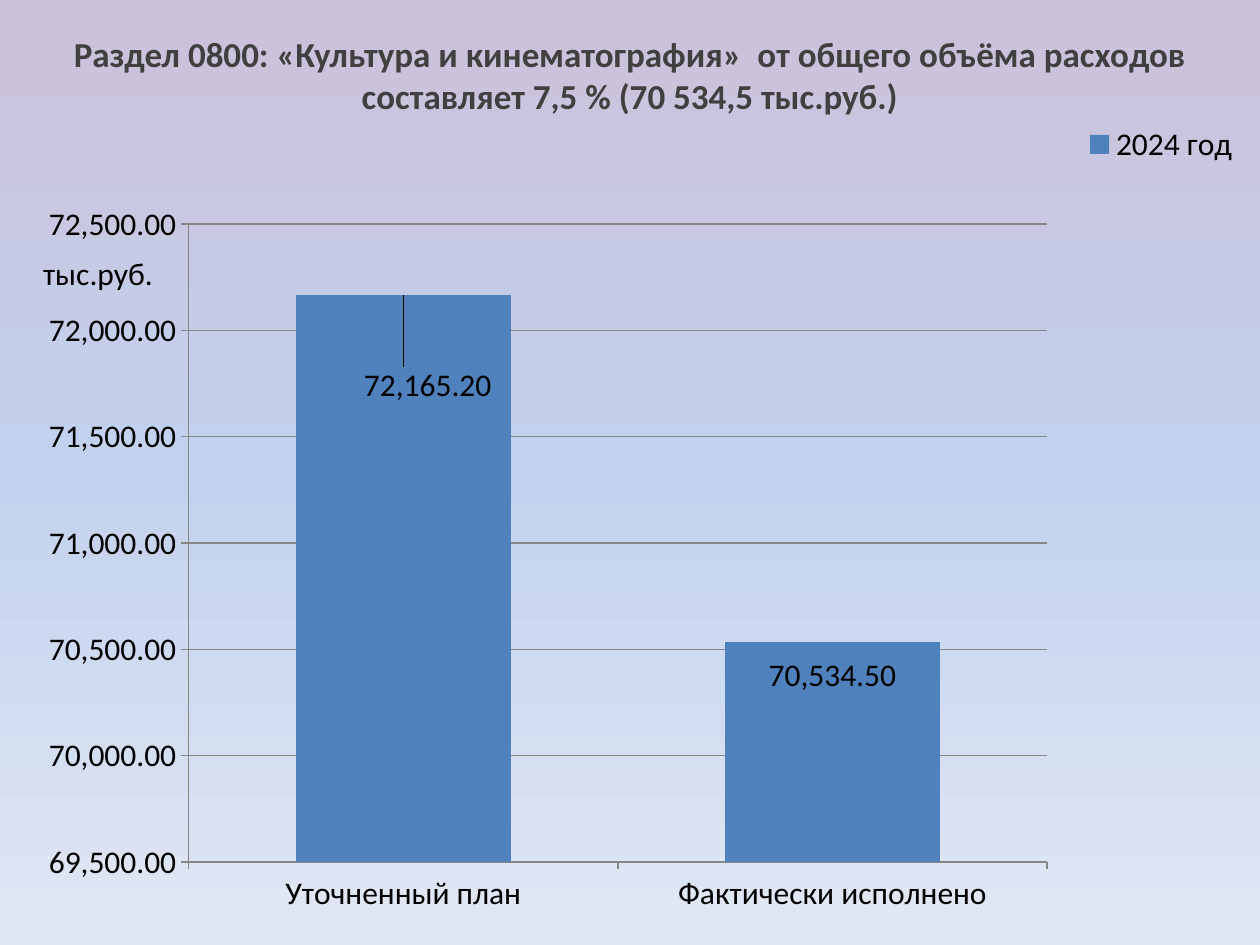
from copy import deepcopy

from pptx import Presentation
from pptx.chart.data import CategoryChartData
from pptx.dml.color import RGBColor
from pptx.enum.chart import (XL_CHART_TYPE, XL_LABEL_POSITION,
                             XL_LEGEND_POSITION, XL_TICK_MARK)
from pptx.enum.text import MSO_ANCHOR, MSO_AUTO_SIZE, PP_ALIGN
from pptx.oxml import parse_xml
from pptx.oxml.ns import nsdecls, qn
from pptx.util import Pt

COLORS = {"heading": "404040", "text": "000000", "bar": "4F81BD", "axis": "868686"}
BACKGROUND = [(0, "CCC1DA"), (0.5, "C2D1ED"), (1, "E1E8F5")]
FONT = "Calibri"
NUMBER_FORMAT = "#,##0.00"
# Shift of each value label from the bar end, as a share of the chart
LABEL_SHIFTS = [(0.02, 0.14), (0, 0.07)]


def rgb(name):
    return RGBColor.from_string(COLORS[name])


def format_font(font, size=18, color="text", bold=False):
    font.name = FONT
    font.size = Pt(size)
    font.bold = bold
    font.color.rgb = rgb(color)


def write_text(frame, text, align=None, **font_format):
    frame.text = text
    paragraph = frame.paragraphs[0]
    paragraph.alignment = align
    format_font(paragraph.runs[0].font, **font_format)


def layout_xml(x, y, w=None, h=None, target=None, absolute=True):
    """Return a manual chart layout; offsets are relative unless absolute."""
    parts = [("layoutTarget", target)]
    if absolute:
        parts += [("xMode", "edge"), ("yMode", "edge")]
    parts += [("x", x), ("y", y), ("w", w), ("h", h)]
    body = "".join(f'<c:{tag} val="{value}"/>' for tag, value in parts if value is not None)
    return parse_xml(f'<c:layout {nsdecls("c")}><c:manualLayout>{body}'
                     '</c:manualLayout></c:layout>')


def set_layout(parent, after, **place):
    """Place a chart part; its layout follows the child named by after."""
    for old in parent.findall(qn("c:layout")):
        parent.remove(old)
    layout = layout_xml(**place)
    if after is None:
        parent.insert(0, layout)
    else:
        parent.find(qn(after)).addnext(layout)


def paint_background(slide):
    fill = slide.background.fill
    fill.gradient()
    fill.gradient_angle = 270
    stop_list = next(slide.element.iter(qn("a:gsLst")))
    stop_list.append(deepcopy(stop_list[-1]))
    for stop, (position, color) in zip(fill.gradient_stops, BACKGROUND):
        stop.position = position
        stop.color.rgb = RGBColor.from_string(color)


def add_heading(slide, text):
    heading = slide.shapes.title
    heading.left, heading.top, heading.width, heading.height = (
        Pt(20), Pt(15), Pt(680), Pt(40))
    frame = heading.text_frame
    frame.word_wrap = True
    frame.auto_size = MSO_AUTO_SIZE.NONE
    frame.vertical_anchor = MSO_ANCHOR.TOP
    write_text(frame, text, align=PP_ALIGN.CENTER, size=20, color="heading", bold=True)


def style_axis(axis):
    axis.major_tick_mark = XL_TICK_MARK.OUTSIDE
    axis.minor_tick_mark = XL_TICK_MARK.NONE
    axis.format.line.color.rgb = rgb("axis")
    axis.format.line.width = Pt(0.75)
    format_font(axis.tick_labels.font)


def add_spending_chart(slide):
    spending = CategoryChartData(number_format=NUMBER_FORMAT)
    spending.categories = ["Уточненный план", "Фактически исполнено"]
    spending.add_series("2024 год", [72165.2, 70534.5])
    chart = slide.shapes.add_chart(XL_CHART_TYPE.COLUMN_CLUSTERED, Pt(14.4), Pt(66.2),
                                   Pt(697.7), Pt(465.1), spending).chart
    format_font(chart.font)

    # Unit shown as the chart title
    write_text(chart.chart_title.text_frame, "тыс.руб.")
    chart.chart_title.include_in_layout = True
    set_layout(chart.chart_title.element if hasattr(chart.chart_title, "element")
               else chart.chart_title._element, "c:tx", x=0.01, y=0.16)

    # Legend
    chart.has_legend = True
    legend = chart.legend
    legend.position = XL_LEGEND_POSITION.CORNER
    legend.include_in_layout = False
    format_font(legend.font)
    set_layout(legend._element, "c:legendPos", x=0.87, y=0.01, w=0.13, h=0.05)

    # Axes and plot area
    style_axis(chart.category_axis)
    values = chart.value_axis
    style_axis(values)
    values.minimum_scale, values.maximum_scale, values.major_unit = 69500, 72500, 500
    values.tick_labels.number_format = NUMBER_FORMAT
    values.tick_labels.number_format_is_linked = False
    values.has_major_gridlines = True
    values.major_gridlines.format.line.color.rgb = rgb("axis")
    values.major_gridlines.format.line.width = Pt(0.75)
    plot_area = next(chart.element.iter(qn("c:plotArea")))
    set_layout(plot_area, None, x=0.134, y=0.133, w=0.703, h=0.784, target="inner")

    # Bars and their labels
    plot = chart.plots[0]
    plot.gap_width = 100
    plot.vary_by_categories = False
    bars = plot.series[0]
    bars.format.fill.solid()
    bars.format.fill.fore_color.rgb = rgb("bar")
    labels = bars.data_labels
    labels.show_value = True
    labels.number_format = NUMBER_FORMAT
    labels.number_format_is_linked = False
    labels.position = XL_LABEL_POSITION.OUTSIDE_END
    format_font(labels.font)
    for index, (x, y) in enumerate(LABEL_SHIFTS):
        label = bars.points[index].data_label
        format_font(label.font)
        label.position = XL_LABEL_POSITION.OUTSIDE_END
    for element, (x, y) in zip(bars._element.iter(qn("c:dLbl")), LABEL_SHIFTS):
        set_layout(element, "c:idx", x=x, y=y, absolute=False)


def main():
    presentation = Presentation()
    presentation.slide_width, presentation.slide_height = Pt(720), Pt(540)
    slide = presentation.slides.add_slide(presentation.slide_layouts[5])
    paint_background(slide)
    add_heading(slide, "Раздел 0800: «Культура и кинематография»  от общего объёма "
                       "расходов составляет 7,5 % (70 534,5 тыс.руб.)")
    add_spending_chart(slide)
    presentation.save("out.pptx")


if __name__ == "__main__":
    main()
